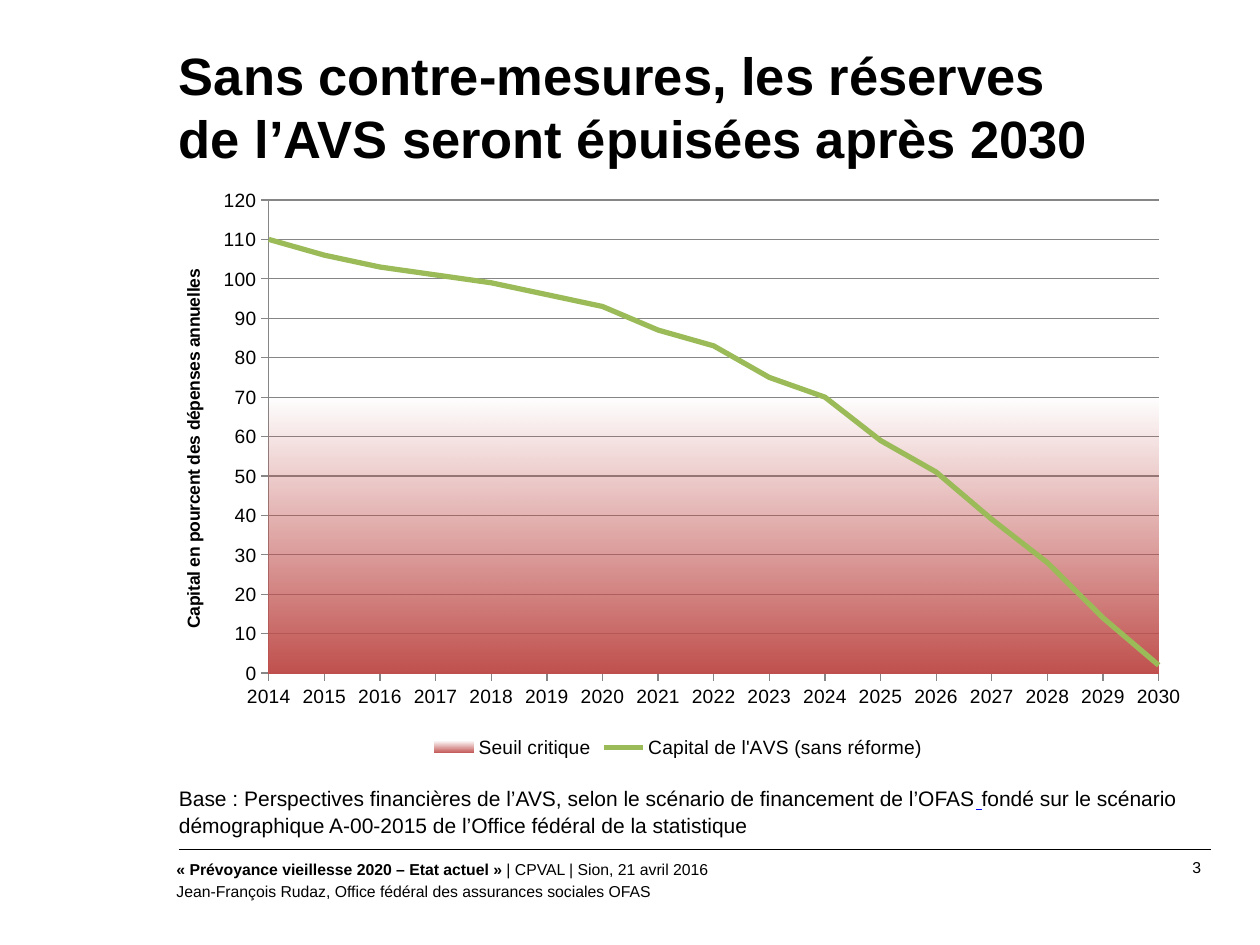
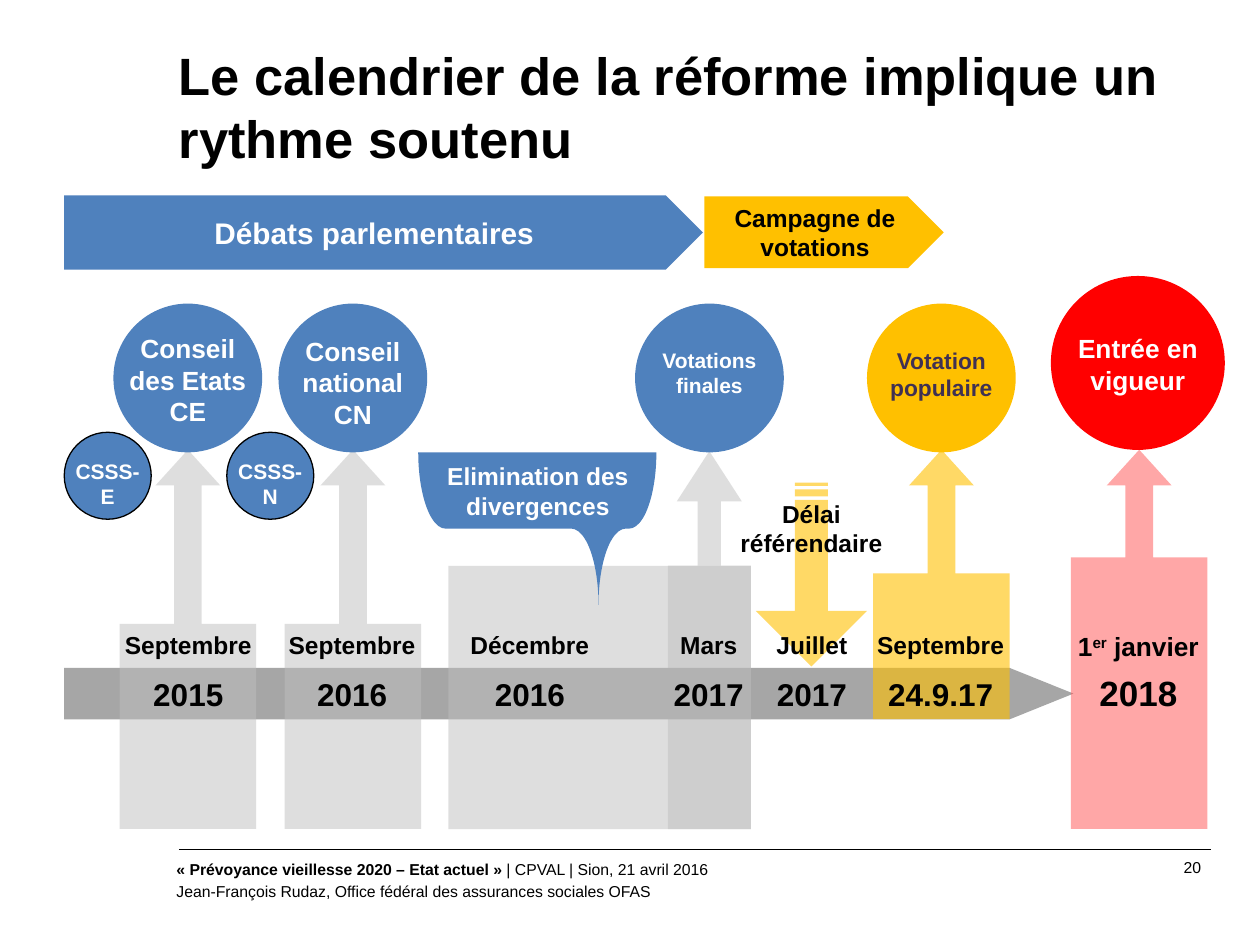
"""Build two slides on the outlook for the AVS reserves and the reform calendar."""
from pptx import Presentation
from pptx.chart.data import CategoryChartData
from pptx.dml.color import RGBColor
from pptx.enum.chart import XL_CHART_TYPE, XL_LEGEND_POSITION, XL_MARKER_STYLE, XL_TICK_MARK
from pptx.enum.shapes import MSO_CONNECTOR, MSO_SHAPE
from pptx.enum.text import MSO_ANCHOR, PP_ALIGN
from pptx.oxml import parse_xml
from pptx.oxml.ns import nsdecls, qn
from pptx.oxml.xmlchemy import OxmlElement
from pptx.util import Pt

FONT = "Arial"
HUES = {
    "black": "000000", "white": "FFFFFF", "link": "0000FF", "blue": "4F81BD",
    "gold": "FFC000", "red": "FF0000", "pink": "FF5050", "plum": "403152",
    "pale": "BFBFBF", "gray": "A6A6A6", "grid": "868686",
    "brick": "C0504D", "green": "9BBB59",
}
MID = PP_ALIGN.CENTER


def rgb(name):
    return RGBColor.from_string(HUES[name])


def write(frame, text, size=12, hue="black", bold=False, align=None, inset=(7.2, 3.6),
          anchor=MSO_ANCHOR.TOP, gap=0, after=0, pitch=None):
    frame.word_wrap = True
    frame.vertical_anchor = anchor
    frame.margin_left = frame.margin_right = Pt(inset[0])
    frame.margin_top = frame.margin_bottom = Pt(inset[1])
    rows = [[(row, {})] for row in text.split("\n")] if isinstance(text, str) else text
    for at, row in enumerate(rows):
        para = frame.add_paragraph() if at else frame.paragraphs[0]
        para.alignment = align
        para.space_before = Pt(gap if at else 0)
        para.space_after = Pt(after)
        if pitch:
            para.line_spacing = Pt(pitch)
        for words, extra in row:
            run = para.add_run()
            run.text = words
            font = run.font
            font.name = FONT
            font.size = Pt(extra.get("size", size))
            font.bold = extra.get("bold", bold)
            font.color.rgb = rgb(extra.get("hue", hue))
            if extra.get("under"):
                font.underline = True
            if "lift" in extra:
                run._r.get_or_add_rPr().set("baseline", str(extra["lift"] * 1000))


class Deck:
    def __init__(self):
        self.show = Presentation()
        self.show.slide_width, self.show.slide_height = Pt(720), Pt(540)
        self.slide = None

    def start(self, title, page):
        self.slide = self.show.slides.add_slide(self.show.slide_layouts[6])
        self.text(title, 102.24, 24.5, 595, 79, size=30, bold=True, inset=(0, 0), pitch=36)
        self.text(str(page), 650, 490.3, 36.3, 12, size=9, align=PP_ALIGN.RIGHT, inset=(0, 0))
        self.text([[("« Prévoyance vieillesse 2020 – Etat actuel » ", {"bold": True}),
                    ("| CPVAL | Sion, 21 avril 2016", {})],
                   [("Jean-François Rudaz, Office fédéral des assurances sociales OFAS", {})]],
                  100.8, 491, 538.5, 34, size=9, inset=(0, 0), gap=1, after=1)
        self.line(102.24, 692, 485.3)

    def text(self, words, x, y, w, h, **fmt):
        box = self.slide.shapes.add_textbox(Pt(x), Pt(y), Pt(w), Pt(h))
        write(box.text_frame, words, **fmt)

    def line(self, left, right, y):
        rule = self.slide.shapes.add_connector(
            MSO_CONNECTOR.STRAIGHT, Pt(left), Pt(y), Pt(right), Pt(y))
        rule.line.color.rgb = rgb("black")
        rule.line.width = Pt(0.75)
        rule._element.spPr.append(OxmlElement("a:effectLst"))

    def shape(self, kind, x, y, w, h, fill, alpha=None, adj=(), turn=0, edge=False,
              words=None, **fmt):
        item = self.slide.shapes.add_shape(kind, Pt(x), Pt(y), Pt(w), Pt(h))
        item.shadow.inherit = False
        item.rotation = turn
        for at, part in enumerate(adj):
            item.adjustments[at] = part
        item.fill.solid()
        item.fill.fore_color.rgb = rgb(fill)
        if alpha:
            tint = OxmlElement("a:alpha")
            tint.set("val", str(alpha * 1000))
            item._element.spPr.find(qn("a:solidFill"))[0].append(tint)
        if edge:
            item.line.color.rgb = rgb("black")
            item.line.width = Pt(0.75)
        else:
            item.line.fill.background()
        if words:
            write(item.text_frame, words, align=MID, anchor=MSO_ANCHOR.MIDDLE, **fmt)

    def disc(self, words, x, y, side, fill, top, hue="white", size=15, edge=False, pad=4):
        self.shape(MSO_SHAPE.OVAL, x, y, side, side, fill, edge=edge)
        self.text(words, x - pad, top, side + 2 * pad, 40, size=size, hue=hue,
                  bold=True, align=MID)

    def tower(self, x, fill, alpha=50, h=216.7, body=0.541):
        self.shape(MSO_SHAPE.UP_ARROW_CALLOUT, x, 257, 78, h, fill, alpha,
                   adj=(0.203, 0.238, 0.262, body))

    def date(self, month, year, x, w=118.8, gap=9, size=14, big=18):
        runs = month if isinstance(month, list) else [(month, {})]
        self.text([runs, [(year, {"size": big})]], x, 356.4, w, 56,
                  size=size, bold=True, align=MID, gap=gap)

    def chart(self, years, zone, limit, x, y, w, h):
        data = CategoryChartData(number_format="#,##0")
        data.categories = years
        data.add_series(*zone)
        data.add_series(*limit)
        chart = self.slide.shapes.add_chart(
            XL_CHART_TYPE.LINE, Pt(x), Pt(y), Pt(w), Pt(h), data).chart
        chart.has_title = False
        chart.font.name, chart.font.size = FONT, Pt(11)
        chart.font.color.rgb = rgb("black")
        chart.has_legend = True
        chart.legend.position = XL_LEGEND_POSITION.BOTTOM
        chart.legend.include_in_layout = False
        axis = chart.value_axis
        axis.minimum_scale, axis.maximum_scale, axis.major_unit = 0, 120, 10
        axis.tick_labels.number_format = "#,##0"
        axis.tick_labels.number_format_is_linked = False
        axis.has_major_gridlines = True
        for side in (axis, chart.category_axis):
            side.major_tick_mark = XL_TICK_MARK.OUTSIDE
        for part in (axis, chart.category_axis, axis.major_gridlines):
            part.format.line.color.rgb = rgb("grid")
            part.format.line.width = Pt(0.75)
        write(axis.axis_title.text_frame, "Capital en pourcent des dépenses annuelles",
              size=10, bold=True)
        self.blend(chart)

    def blend(self, chart):
        plot = chart.plots[0]
        plot.vary_by_categories = False
        back, curve = plot.series
        curve.smooth = False
        curve.marker.style = XL_MARKER_STYLE.NONE
        curve.format.line.color.rgb = rgb("green")
        curve.format.line.width = Pt(3)
        back.format.line.fill.background()
        tone = HUES["brick"]
        back._element.spPr.insert(0, parse_xml(
            f'<a:gradFill {nsdecls("a")} rotWithShape="1"><a:gsLst>'
            f'<a:gs pos="0"><a:srgbClr val="{tone}"/></a:gs>'
            f'<a:gs pos="100000"><a:srgbClr val="{tone}"><a:alpha val="0"/></a:srgbClr></a:gs>'
            '</a:gsLst><a:lin ang="16200000" scaled="0"/></a:gradFill>'))
        lines, ser = plot._element, back._element
        for tag in ("c:marker", "c:smooth"):
            for node in ser.findall(qn(tag)):
                ser.remove(node)
        keys = [node.get("val") for node in lines.findall(qn("c:axId"))]
        area = parse_xml(
            f'<c:areaChart {nsdecls("c")}><c:grouping val="standard"/><c:varyColors val="0"/>'
            + "".join(f'<c:axId val="{key}"/>' for key in keys) + "</c:areaChart>")
        area.insert(2, ser)
        lines.addprevious(area)
        room = lines.getparent()
        for node in room.findall(qn("c:layout")):
            room.remove(node)
        spots = zip("xywh", (0.09, 0.032, 0.891, 0.813))
        room.insert(0, parse_xml(
            f'<c:layout {nsdecls("c")}><c:manualLayout><c:layoutTarget val="inner"/>'
            '<c:xMode val="edge"/><c:yMode val="edge"/>'
            + "".join(f'<c:{key} val="{val}"/>' for key, val in spots)
            + "</c:manualLayout></c:layout>"))


def reserves(deck):
    deck.start("Sans contre-mesures, les réserves\nde l’AVS seront épuisées après 2030", 3)
    deck.text([[("Base\u00a0: Perspectives financières de l’AVS, selon le scénario de "
                 "financement de l’OFAS", {}),
                (" ", {"hue": "link", "under": True}),
                ("fondé sur le scénario démographique A-00-2015 de l’Office fédéral "
                 "de la statistique", {})]],
              102.24, 445, 590, 36, inset=(0, 3.6), pitch=15)
    years = [str(year) for year in range(2014, 2031)]
    funds = (110, 106, 103, 101, 99, 96, 93, 87, 83, 75, 70, 59, 51, 39, 28, 14, 2)
    deck.chart(years, ("Seuil critique", [70] * len(years)),
               ("Capital de l'AVS (sans réforme)", funds), 102.24, 103.7, 572.4, 332.6)


def calendar(deck):
    deck.start("Le calendrier de la réforme implique un rythme soutenu", 20)
    deck.shape(MSO_SHAPE.UP_ARROW_CALLOUT, 381.6, 257.8, 47.5, 216, "pale", 50,
               adj=(0.279, 0.391, 0.605, 0.697))
    deck.shape(MSO_SHAPE.RIGHT_ARROW, 36.7, 381.6, 576.7, 29.5, "gray", adj=(1, 1.241))
    deck.shape(MSO_SHAPE.RECTANGLE, 256.3, 323.3, 172.8, 150.5, "pale", 50)
    deck.shape(MSO_SHAPE.PENTAGON, 36.7, 111.6, 365, 42.5, "blue",
               words="Débats parlementaires", size=17, hue="white", bold=True)

    deck.tower(68.4, "pale")
    deck.disc("Conseil des Etats\nCE", 64.8, 173.5, 85, "blue", 186.5)
    deck.tower(162.7, "pale")
    deck.disc("Conseil national\nCN", 159.1, 173.5, 85, "blue", 188)
    deck.date("Septembre", "2016", 141.8)
    deck.tower(612, "pink", body=0.716)
    deck.disc("Entrée en vigueur", 600.5, 157.7, 99.4, "red", 186.5)
    deck.date([("1", {}), ("er", {"lift": 30}), (" janvier", {})], "2018", 591.1,
              gap=6, size=15, big=20)
    deck.disc("Votations finales", 362.9, 173.5, 85, "blue", 195.1, size=12)
    deck.date("Mars", "2017", 360, 90)
    deck.tower(499, "gold", 60, 154)
    deck.disc("Votation populaire", 495.4, 173.5, 85, "gold", 194.4, "plum", 13, pad=10)
    deck.date("Septembre", "24.9.17", 478.1)
    deck.shape(MSO_SHAPE.STRIPED_RIGHT_ARROW, 411.1, 296.6, 105.1, 63.4, "gold", 60,
               adj=(0.298, 0.5), turn=90)
    deck.date("Juillet", "2017", 404.6)
    deck.text("Délai référendaire", 411.1, 281.5, 105.1, 41, size=14, bold=True, align=MID)
    deck.date("Septembre", "2015", 48.2)
    deck.date("Décembre", "2016", 256.3, 92.9)
    deck.shape(MSO_SHAPE.LEFT_BRACE, 263.5, 234, 87.1, 136.1, "blue",
               adj=(0.179, 0.757), turn=270)
    deck.text("Elimination des divergences", 230.4, 260, 154, 41, size=14,
              hue="white", bold=True, align=MID)
    for name, x in (("CSSS-N", 129.6), ("CSSS-E", 36.7)):
        deck.disc(name, x, 247, 49.7, "blue", 258.5, size=12, edge=True, pad=2)
    deck.shape(MSO_SHAPE.PENTAGON, 402.5, 112.3, 136.8, 41, "gold",
               words="Campagne de votations", size=14, bold=True)


def main():
    deck = Deck()
    reserves(deck)
    calendar(deck)
    deck.show.save("out.pptx")


if __name__ == "__main__":
    main()
